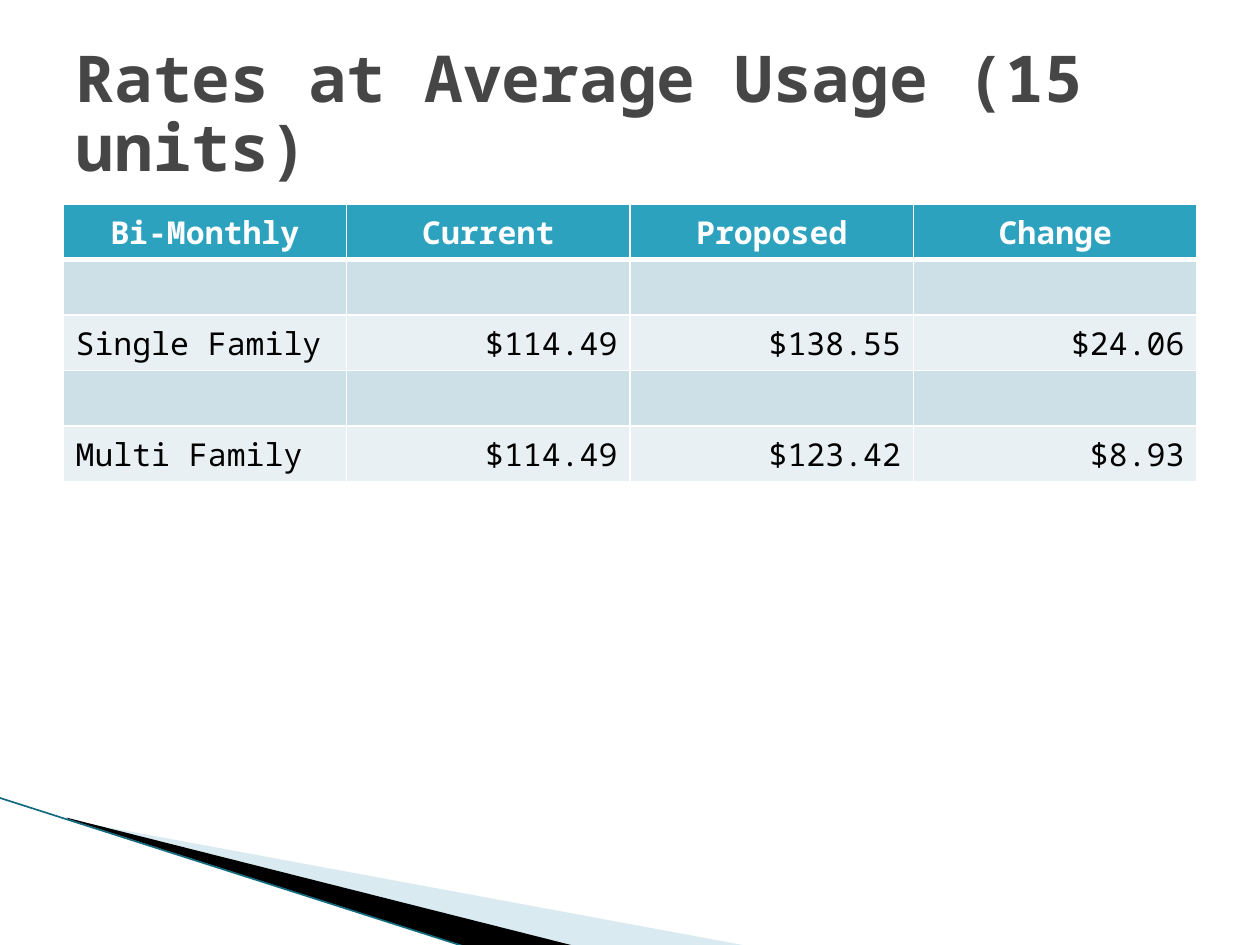
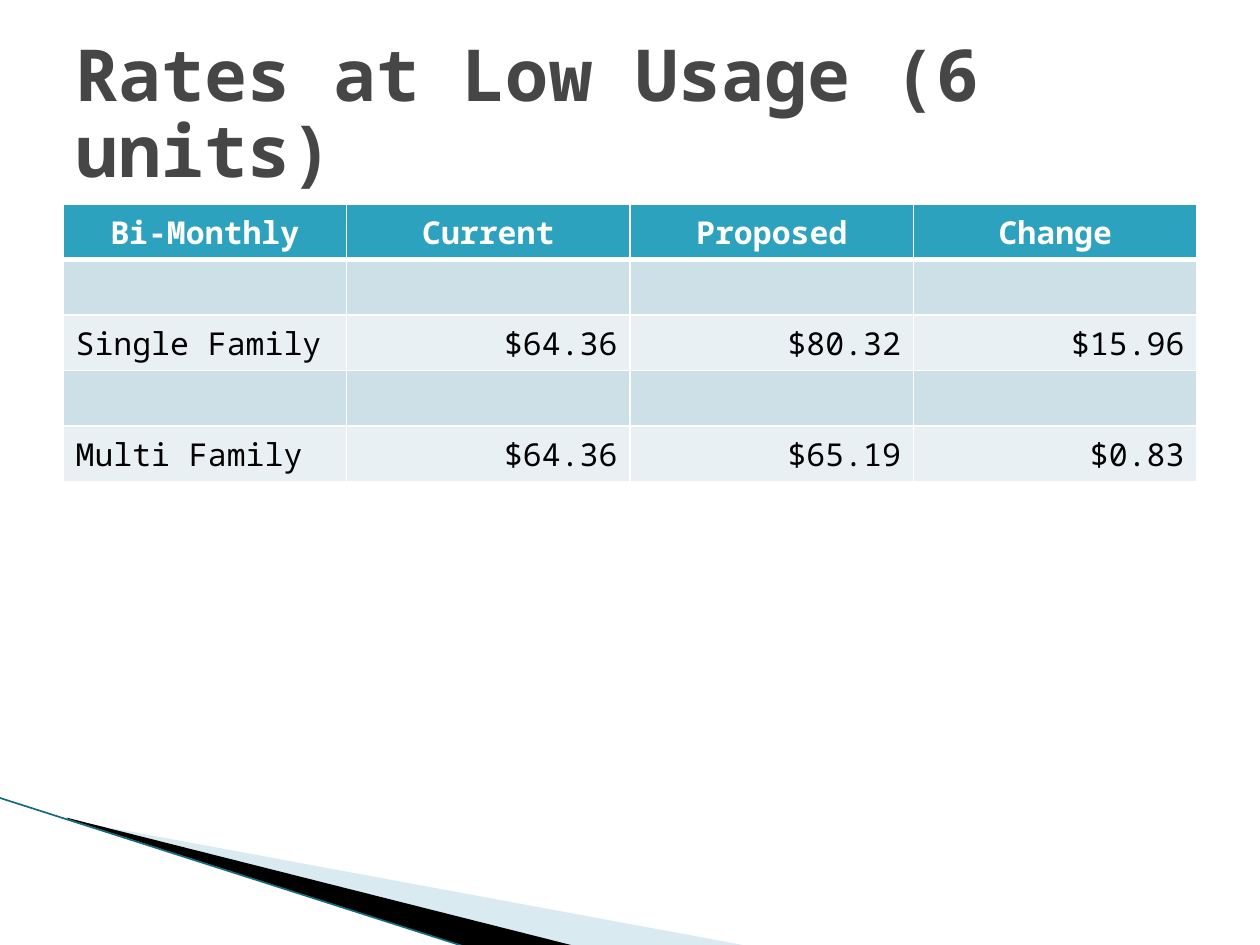
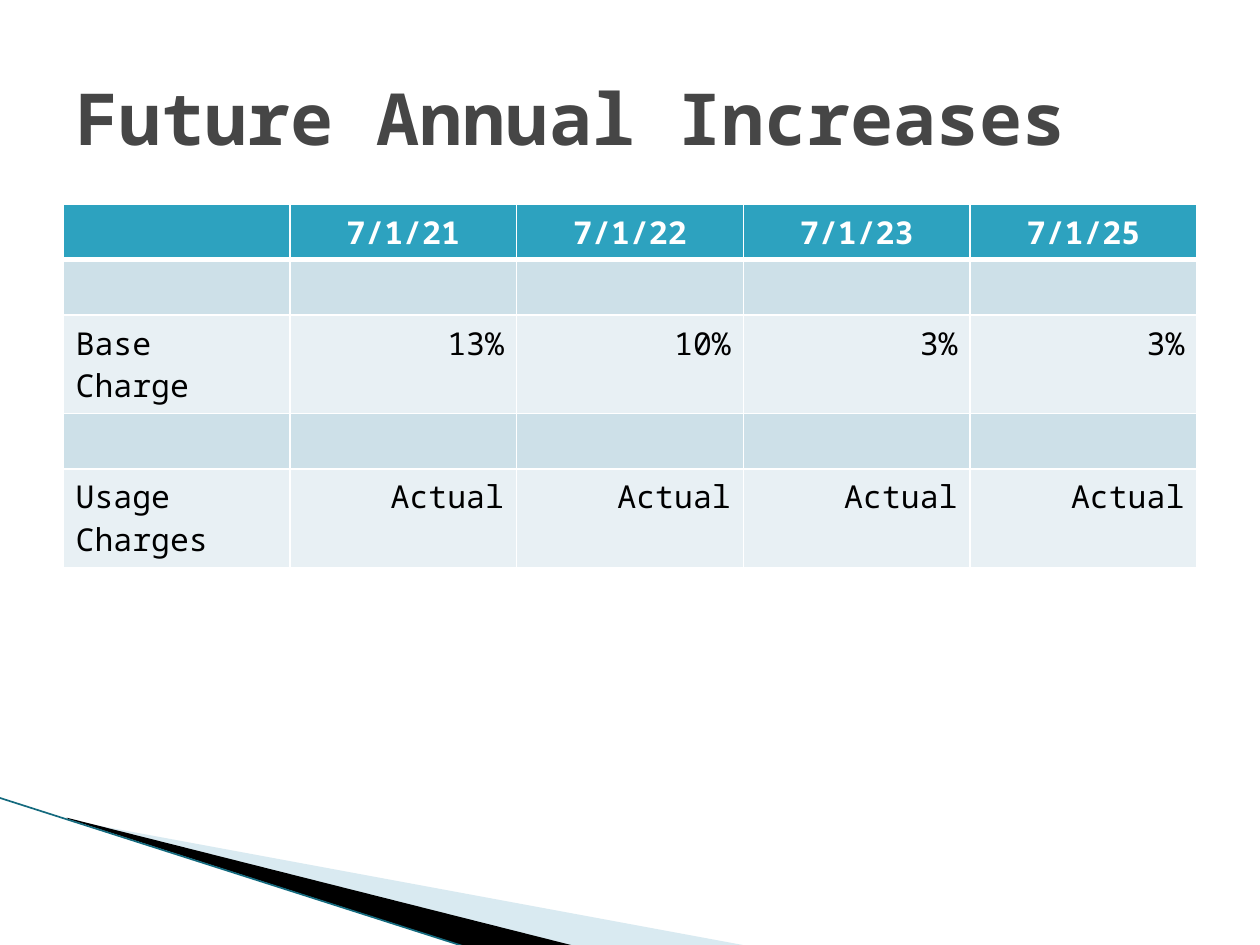
"""Builds three slides of water rate tables."""
from lxml import etree
from pptx import Presentation
from pptx.dml.color import RGBColor
from pptx.enum.shapes import MSO_CONNECTOR
from pptx.enum.text import MSO_ANCHOR, PP_ALIGN
from pptx.oxml.ns import qn
from pptx.util import Inches, Pt

LEFT, MID, RIGHT = PP_ALIGN.LEFT, PP_ALIGN.CENTER, PP_ALIGN.RIGHT
CENTER = MSO_ANCHOR.MIDDLE
STRAIGHT = MSO_CONNECTOR.STRAIGHT

FONT = "Noto Sans Mono"
WHITE, BLACK, GREY = "FFFFFF", "000000", "464646"
TEAL, BAND, PALE = "2DA2BF", "CDE0E8", "E8F0F4"
SKY, EDGE = "A0CBDC", "146A7E"

RATES = ("Bi-Monthly", "Current", "Proposed", "Change")
SLIDES = [
    {"title": "Rates at Average Usage (15 units)", "size": 36.9, "gap": 0.88,
     "head": RATES,
     "rows": [("Single Family", "$114.49", "$138.55", "$24.06"),
              ("Multi Family", "$114.49", "$123.42", "$8.93")]},
    {"title": "Rates at Low Usage (6 units)", "size": 41, "gap": 0.88,
     "head": RATES,
     "rows": [("Single Family", "$64.36", "$80.32", "$15.96"),
              ("Multi Family", "$64.36", "$65.19", "$0.83")]},
    {"title": "Future Annual Increases", "size": 41, "gap": 1.0,
     "head": ("", "7/1/21", "7/1/22", "7/1/23", "7/1/25"),
     "rows": [("Base Charge", "13%", "10%", "3%", "3%"),
              ("Usage Charges", "Actual", "Actual", "Actual", "Actual")]},
]
WEDGES = [
    (SKY, 40, [(0.55, 6.51), (5.95, 7.51), (4.56, 7.51), (0.55, 6.5)]),
    (BLACK, 100, [(0.53, 6.49), (4.57, 7.51), (3.72, 7.52), (0.54, 6.5)]),
]
EDGE_ENDS = (-0.01, 6.33, 3.71, 7.52)
SIDE, WIDTH, TABLE_TOP, ROW = 0.5, 9, 1.62, 0.44


def paint(fill, color, alpha=100):
    """Fill with one colour, alpha in percent."""
    fill.solid()
    fill.fore_color.rgb = RGBColor.from_string(color)
    if alpha < 100:
        for node in fill._xPr.iter(qn("a:srgbClr")):
            etree.SubElement(node, qn("a:alpha"), val=str(alpha * 1000))


def style(para, size, color, bold, align=LEFT):
    """Set the font and alignment of a paragraph."""
    para.alignment = align
    font = para.font
    font.name, font.size, font.bold = FONT, Pt(size), bold
    font.color.rgb = RGBColor.from_string(color)


def add_sweep(slide, layout):
    """Draw the corner sweep and place it on the layout behind the title."""
    parts = []
    for color, alpha, points in WEDGES:
        spots = [(Inches(x), Inches(y)) for x, y in points]
        build = slide.shapes.build_freeform(*spots[0])
        build.add_line_segments(spots[1:])
        wedge = build.convert_to_shape()
        wedge.shadow.inherit = False
        paint(wedge.fill, color, alpha)
        wedge.line.fill.background()
        parts.append(wedge)
    edge = slide.shapes.add_connector(STRAIGHT, *map(Inches, EDGE_ENDS))
    edge.line.width = Pt(0.95)
    paint(edge.line.fill, EDGE)
    etree.SubElement(edge.element.spPr, qn("a:effectLst"))
    parts.append(edge)
    for place, part in enumerate(parts, 2):
        layout.shapes.element.insert(place, part.element)


def add_title(slide, text, size, gap):
    """Place and format the title."""
    title = slide.shapes.title
    title.left, title.top = Inches(SIDE), Inches(0.3)
    title.width, title.height = Inches(WIDTH), Inches(1.25)
    frame = title.text_frame
    frame.text, frame.word_wrap = text, True
    frame.vertical_anchor = CENTER
    para = frame.paragraphs[0]
    para.line_spacing = gap
    style(para, size, GREY, True)


def add_borders(cell, row):
    """Draw white cell borders, thick below the header."""
    widths = {"L": 1, "R": 1, "T": 3 if row == 1 else 1, "B": 3 if row == 0 else 1}
    props = cell._tc.get_or_add_tcPr()
    for side, width in widths.items():
        line = etree.SubElement(props, qn(f"a:ln{side}"), w=str(Pt(width)))
        solid = etree.SubElement(line, qn("a:solidFill"))
        etree.SubElement(solid, qn("a:srgbClr"), val=WHITE)


def add_rates(slide, head, rows):
    """Add the table with an empty band above each row."""
    grid = [head]
    for row in rows:
        grid += [("",) * len(head), row]
    shape = slide.shapes.add_table(
        len(grid), len(head), Inches(SIDE), Inches(TABLE_TOP),
        Inches(WIDTH), Inches(ROW * len(grid)))
    table = shape.table
    table.horz_banding = False
    for r, row in enumerate(grid):
        for c, text in enumerate(row):
            cell = table.cell(r, c)
            cell.text = text
            add_borders(cell, r)
            paint(cell.fill, TEAL if r == 0 else BAND if r % 2 else PALE)
            align = MID if r == 0 else RIGHT if c else LEFT
            style(cell.text_frame.paragraphs[0], 18,
                  BLACK if r else WHITE, r == 0, align)


def main():
    """Build and save the slides."""
    prs = Presentation()
    prs.slide_width, prs.slide_height = Inches(10), Inches(7.5)
    layout = prs.slide_layouts[5]
    for i, item in enumerate(SLIDES):
        slide = prs.slides.add_slide(layout)
        if i == 0:
            add_sweep(slide, layout)
        add_title(slide, item["title"], item["size"], item["gap"])
        add_rates(slide, item["head"], item["rows"])
    prs.save("out.pptx")


if __name__ == "__main__":
    main()
